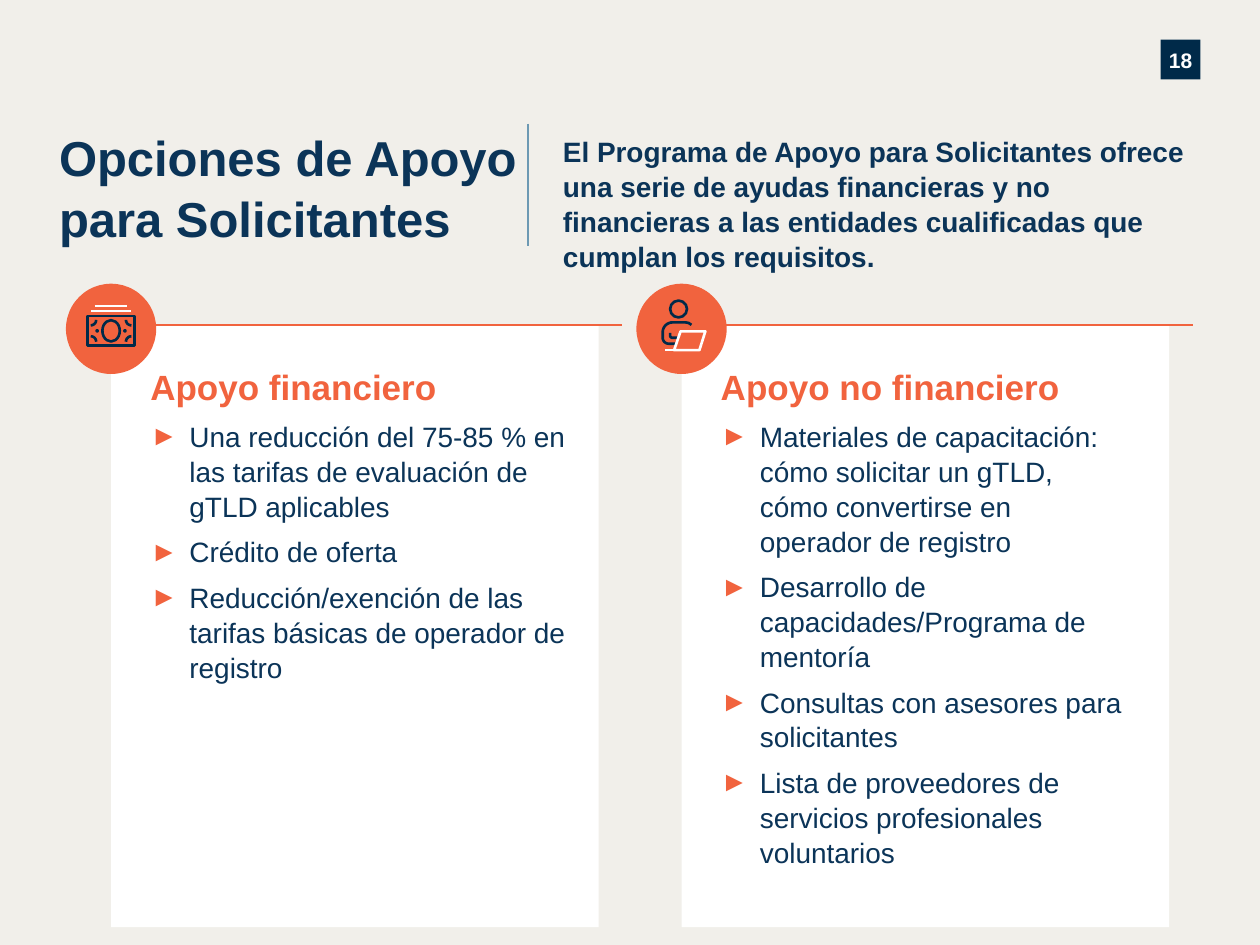
from itertools import product
from math import cos, radians, sin

from lxml.etree import SubElement
from pptx import Presentation
from pptx.dml.color import RGBColor
from pptx.enum.shapes import MSO_CONNECTOR, MSO_SHAPE
from pptx.enum.text import MSO_ANCHOR, MSO_AUTO_SIZE, PP_ALIGN
from pptx.oxml.ns import qn
from pptx.util import Cm, Pt

NAVY, INK, ORANGE = "002A49", "0B3458", "F1633E"
SAND, WHITE, STEEL = "F1EFEA", "FFFFFF", "6D99B3"
COLUMN_STEP = 11.5
PANEL_LEFT, PANEL_TOP = 2.24, 6.55
PANEL_WIDTH, PANEL_HEIGHT = 9.83, 12.14
BADGE_SIZE = 1.82

COLUMNS = [
    ("Apoyo financiero", 0.61, [
        "Una reducción del 75-85 % en las tarifas de evaluación de gTLD aplicables",
        "Crédito de oferta",
        "Reducción/exención de las tarifas básicas de operador de registro",
    ]),
    ("Apoyo no financiero", 0.89, [
        "Materiales de capacitación: cómo solicitar un gTLD, "
        "cómo convertirse en operador de registro",
        "Desarrollo de capacidades/Programa de mentoría",
        "Consultas con asesores para solicitantes",
        "Lista de proveedores de servicios profesionales voluntarios",
    ]),
]


def rgb(value):
    return RGBColor.from_string(value)


def arc(x, y, radius, start, end, steps=8):
    """Points along a circle, angles in degrees, clockwise from the right."""
    angles = [radians(start + (end - start) * i / steps) for i in range(steps + 1)]
    return [(x + radius * cos(a), y + radius * sin(a)) for a in angles]


class SlideBuilder:
    font = "Arial"
    line_spacing = 1.04

    def __init__(self, slide):
        self.slide = slide
        slide.background.fill.solid()
        slide.background.fill.fore_color.rgb = rgb(SAND)

    def frame(self, shape, insets=(0, 0, 0, 0), anchor=MSO_ANCHOR.TOP):
        """Prepare the text frame; insets run left, top, right, bottom."""
        text = shape.text_frame
        text.word_wrap = True
        text.auto_size = MSO_AUTO_SIZE.NONE
        text.vertical_anchor = anchor
        (text.margin_left, text.margin_top,
         text.margin_right, text.margin_bottom) = map(Cm, insets)
        return text

    def add_words(self, paragraph, words, size, color, bold=True, align=PP_ALIGN.LEFT):
        paragraph.alignment = align
        paragraph.line_spacing = self.line_spacing
        run = paragraph.add_run()
        run.text = words
        run.font.name = self.font
        run.font.size = Pt(size)
        run.font.bold = bold
        run.font.color.rgb = rgb(color)

    def bullet(self, paragraph, words):
        properties = paragraph._p.get_or_add_pPr()
        properties.set("marL", str(Cm(0.79)))
        properties.set("indent", str(-Cm(0.79)))
        color = SubElement(properties, qn("a:buClr"))
        SubElement(color, qn("a:srgbClr"), val=ORANGE)
        SubElement(properties, qn("a:buFont"), typeface=self.font)
        SubElement(properties, qn("a:buChar"), char="►")
        paragraph.space_before = Pt(6)
        self.add_words(paragraph, words, 16, INK, bold=False)

    def title(self, words, left, top, width, height):
        title = self.slide.shapes.title
        title.left, title.top = Cm(left), Cm(top)
        title.width, title.height = Cm(width), Cm(height)
        self.add_words(self.frame(title).paragraphs[0], words, 28, INK)

    def lead(self, words, left, top, width, height):
        box = self.slide.shapes.add_textbox(Cm(left), Cm(top), Cm(width), Cm(height))
        text = self.frame(box)
        text.auto_size = MSO_AUTO_SIZE.SHAPE_TO_FIT_TEXT
        self.add_words(text.paragraphs[0], words, 16, INK)

    def filled(self, kind, color, left, top, width, height):
        shape = self.slide.shapes.add_shape(
            kind, Cm(left), Cm(top), Cm(width), Cm(height))
        shape.shadow.inherit = False
        shape.fill.solid()
        shape.fill.fore_color.rgb = rgb(color)
        shape.line.fill.background()
        return shape

    def rule(self, start, end, color):
        line = self.slide.shapes.add_connector(
            MSO_CONNECTOR.STRAIGHT, *map(Cm, (*start, *end)))
        line.line.color.rgb = rgb(color)
        line.line.width = Pt(1.25)
        SubElement(line._element.spPr, qn("a:effectLst"))

    def outline(self, shape, color):
        shape.shadow.inherit = False
        shape.fill.background()
        shape.line.color.rgb = rgb(color)
        shape.line.width = Pt(1.5)

    def ring(self, icon, x, y, width, height, kind=MSO_SHAPE.OVAL):
        """Outlined shape centred on x, y."""
        self.outline(icon.shapes.add_shape(
            kind, Cm(x - width / 2), Cm(y - height / 2), Cm(width), Cm(height)), NAVY)

    def stroke(self, icon, points, color=NAVY, close=False):
        first, *rest = [(Cm(x), Cm(y)) for x, y in points]
        builder = icon.shapes.build_freeform(*first)
        builder.add_line_segments(rest, close=close)
        self.outline(builder.convert_to_shape(), color)

    def panel(self, left, heading, right_inset, items):
        card = self.filled(MSO_SHAPE.RECTANGLE, WHITE,
                           left, PANEL_TOP, PANEL_WIDTH, PANEL_HEIGHT)
        text = self.frame(card, (0.79, 0.79, right_inset, 0.78))
        self.add_words(text.paragraphs[0], heading, 20, ORANGE)
        for item in items:
            self.bullet(text.add_paragraph(), item)
        self.rule((left, PANEL_TOP), (left + 10.3, PANEL_TOP), ORANGE)
        self.filled(MSO_SHAPE.OVAL, ORANGE, left - BADGE_SIZE / 2, 5.72,
                    BADGE_SIZE, BADGE_SIZE)

    def banknote_icon(self, x, y):
        icon = self.slide.shapes.add_group_shape()
        self.ring(icon, x, y, 0.94, 0.6, MSO_SHAPE.RECTANGLE)
        self.ring(icon, x, y, 0.35, 0.43)
        for side in (-1, 1):
            self.ring(icon, x + side * 0.28, y, 0.02, 0.02)
        turns = {(-1, -1): 0, (1, -1): 90, (1, 1): 180, (-1, 1): 270}
        for (side, level), turn in turns.items():
            self.stroke(icon, arc(x + side * 0.41, y + level * 0.22, 0.11,
                                  turn, turn + 90))
        for half, rise in ((0.4, 0.4), (0.33, 0.5)):
            self.stroke(icon, [(x - half, y - rise), (x + half, y - rise)], WHITE)

    def advisor_icon(self, x, y):
        """Person at a laptop; x, y is the centre of the head."""
        icon = self.slide.shapes.add_group_shape()
        self.ring(icon, x, y, 0.34, 0.34)
        body = [(0.26, 0.32), (0.2, 0.28), (0.14, 0.27),
                *arc(-0.12, 0.47, 0.2, 270, 180),
                *arc(-0.2, 0.58, 0.12, 180, 90), (-0.04, 0.7)]
        arm = [(-0.01, 0.58), (-0.14, 0.58), (-0.17, 0.55), (-0.17, 0.48)]
        base = [(-0.06, 0.83), (-0.28, 0.83)]
        screen = [(0.04, 0.45), (0.54, 0.45), (0.42, 0.83), (-0.09, 0.83)]
        for part, color, close in ((body, NAVY, False), (arm, NAVY, False),
                                   (base, WHITE, False), (screen, WHITE, True)):
            self.stroke(icon, [(x + dx, y + dy) for dx, dy in part], color, close)


def main():
    deck = Presentation()
    deck.slide_width, deck.slide_height = Cm(25.4), Cm(19.05)
    page = SlideBuilder(deck.slides.add_slide(deck.slide_layouts[5]))

    number = page.filled(MSO_SHAPE.RECTANGLE, NAVY, 23.4, 0.8, 0.8, 0.8)
    page.add_words(page.frame(number, anchor=MSO_ANCHOR.MIDDLE).paragraphs[0],
                   "18", 12, WHITE, align=PP_ALIGN.CENTER)
    page.title("Opciones de Apoyo para Solicitantes", 1.19, 2.52, 9.83, 2.34)
    page.rule((10.64, 2.49), (10.64, 4.95), STEEL)
    page.lead("El Programa de Apoyo para Solicitantes ofrece una serie de ayudas "
              "financieras y no financieras a las entidades cualificadas que "
              "cumplan los requisitos.", 11.35, 2.69, 12.55, 2.06)

    for index, column in enumerate(COLUMNS):
        page.panel(PANEL_LEFT + index * COLUMN_STEP, *column)
    page.banknote_icon(PANEL_LEFT, 6.67)
    page.advisor_icon(13.68, 6.23)
    deck.save("out.pptx")


if __name__ == "__main__":
    main()
